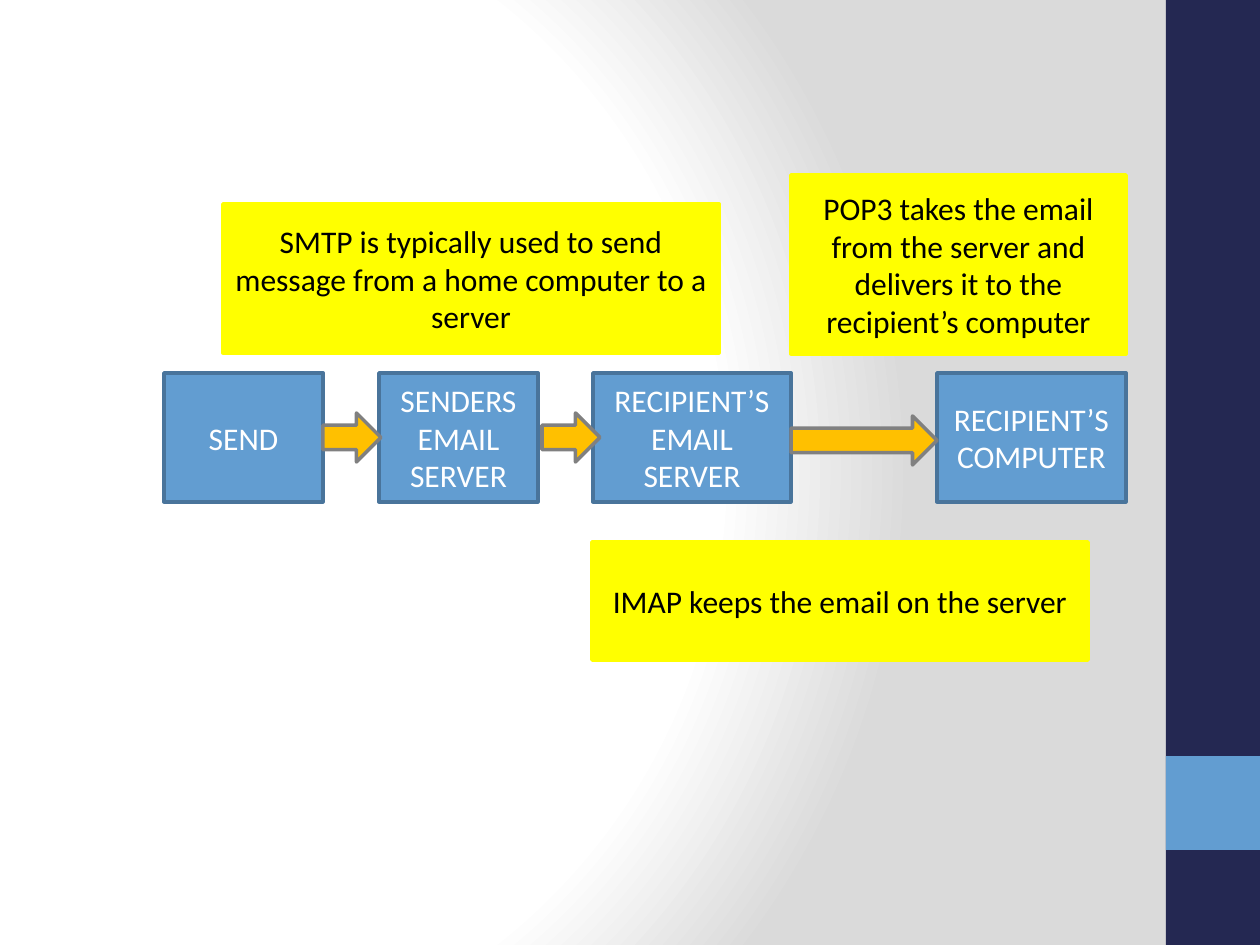
from typing import NamedTuple, Optional

from pptx import Presentation
from pptx.dml.color import RGBColor
from pptx.enum.shapes import MSO_SHAPE
from pptx.enum.text import MSO_ANCHOR, PP_ALIGN
from pptx.oxml import parse_xml
from pptx.oxml.ns import nsdecls
from pptx.util import Pt

RECTANGLE = MSO_SHAPE.RECTANGLE
RIGHT_ARROW = MSO_SHAPE.RIGHT_ARROW
MIDDLE = MSO_ANCHOR.MIDDLE
CENTER = PP_ALIGN.CENTER

EMU_PER_PX = 914400 / 126
PAGE_WIDTH, PAGE_HEIGHT = 1260, 945
FONT = "Calibri"

WHITE = RGBColor(0xFF, 0xFF, 0xFF)
BLACK = RGBColor(0x00, 0x00, 0x00)
GREY = RGBColor(0xDA, 0xDA, 0xDA)
NAVY = RGBColor(0x24, 0x28, 0x52)
BLUE = RGBColor(0x62, 0x9D, 0xD1)
BLUE_EDGE = RGBColor(0x49, 0x74, 0x9B)
AMBER = RGBColor(0xFF, 0xC0, 0x00)
ARROW_EDGE = RGBColor(0x80, 0x80, 0x80)
YELLOW = RGBColor(0xFF, 0xFF, 0x00)


class Area(NamedTuple):
    left: int
    top: int
    width: int
    height: int


class Label(NamedTuple):
    text: str
    area: Area


STAGE_TOP, STAGE_HEIGHT = 373, 129
STAGES = [
    Label(text, Area(left, STAGE_TOP, width, STAGE_HEIGHT))
    for text, left, width in [
        ("SEND", 164, 159),
        ("SENDERS EMAIL SERVER", 379, 159),
        ("RECIPIENT’S EMAIL SERVER", 593, 198),
        ("RECIPIENT’S COMPUTER", 937, 189),
    ]
]
ARROWS = [
    Area(323, 413, 58, 49),
    Area(542, 413, 58, 49),
    Area(791, 416, 146, 49),
]
NOTES = [
    Label("SMTP is typically used to send message from a home computer to a server",
          Area(223, 204, 496, 149)),
    Label("POP3 takes the email from the server and delivers it to the recipient’s computer",
          Area(791, 175, 335, 179)),
    Label("IMAP keeps the email on the server", Area(592, 542, 496, 118)),
]
SIDEBAR = Area(1166, 0, 94, PAGE_HEIGHT)
SIDEBAR_ACCENT = Area(1166, 756, 94, 94)


def px(length: int) -> int:
    return round(length * EMU_PER_PX)


def set_background(page) -> None:
    """Give the page a radial gradient from white to grey."""
    page.background.fill.gradient()
    stops = "".join(
        f'<a:gs pos="{percent * 1000}"><a:srgbClr val="{color}"/></a:gs>'
        for percent, color in [(0, WHITE), (75, WHITE), (100, GREY)]
    )
    gradient = parse_xml(
        f'<a:gradFill {nsdecls("a")} rotWithShape="1"><a:gsLst>{stops}</a:gsLst>'
        '<a:path path="circle">'
        '<a:fillToRect l="20000" t="50000" r="100000" b="50000"/>'
        "</a:path></a:gradFill>"
    )
    current = page.element.xpath(".//p:bgPr/a:gradFill")[0]
    current.getparent().replace(current, gradient)


def add_box(page, area: Area, fill: RGBColor, edge: Optional[RGBColor] = None,
            kind=RECTANGLE):
    box = page.shapes.add_shape(kind, *(px(length) for length in area))
    box.shadow.inherit = False
    box.fill.solid()
    box.fill.fore_color.rgb = fill
    if edge is None:
        box.line.fill.background()
    else:
        box.line.color.rgb = edge
        box.line.width = Pt(2)
    return box


def write_text(box, text: str, *, color: RGBColor, size: int = 18) -> None:
    frame = box.text_frame
    frame.word_wrap = True
    frame.vertical_anchor = MIDDLE
    para = frame.paragraphs[0]
    para.alignment = CENTER
    span = para.add_run()
    span.text = text
    span.font.name = FONT
    span.font.size = Pt(size)
    span.font.color.rgb = color


def main() -> None:
    deck = Presentation()
    deck.slide_width, deck.slide_height = px(PAGE_WIDTH), px(PAGE_HEIGHT)
    page = deck.slides.add_slide(deck.slide_layouts[6])

    # Background and sidebar
    set_background(page)
    add_box(page, SIDEBAR, NAVY)
    add_box(page, SIDEBAR_ACCENT, BLUE)

    # Stages of the email's journey
    for stage in STAGES:
        write_text(add_box(page, stage.area, BLUE, BLUE_EDGE), stage.text, color=WHITE)

    # Arrows between the stages
    for arrow in ARROWS:
        add_box(page, arrow, AMBER, ARROW_EDGE, RIGHT_ARROW)

    # Notes on the protocols
    for note in NOTES:
        write_text(add_box(page, note.area, YELLOW, YELLOW), note.text, color=BLACK)

    deck.save("out.pptx")


if __name__ == "__main__":
    main()
